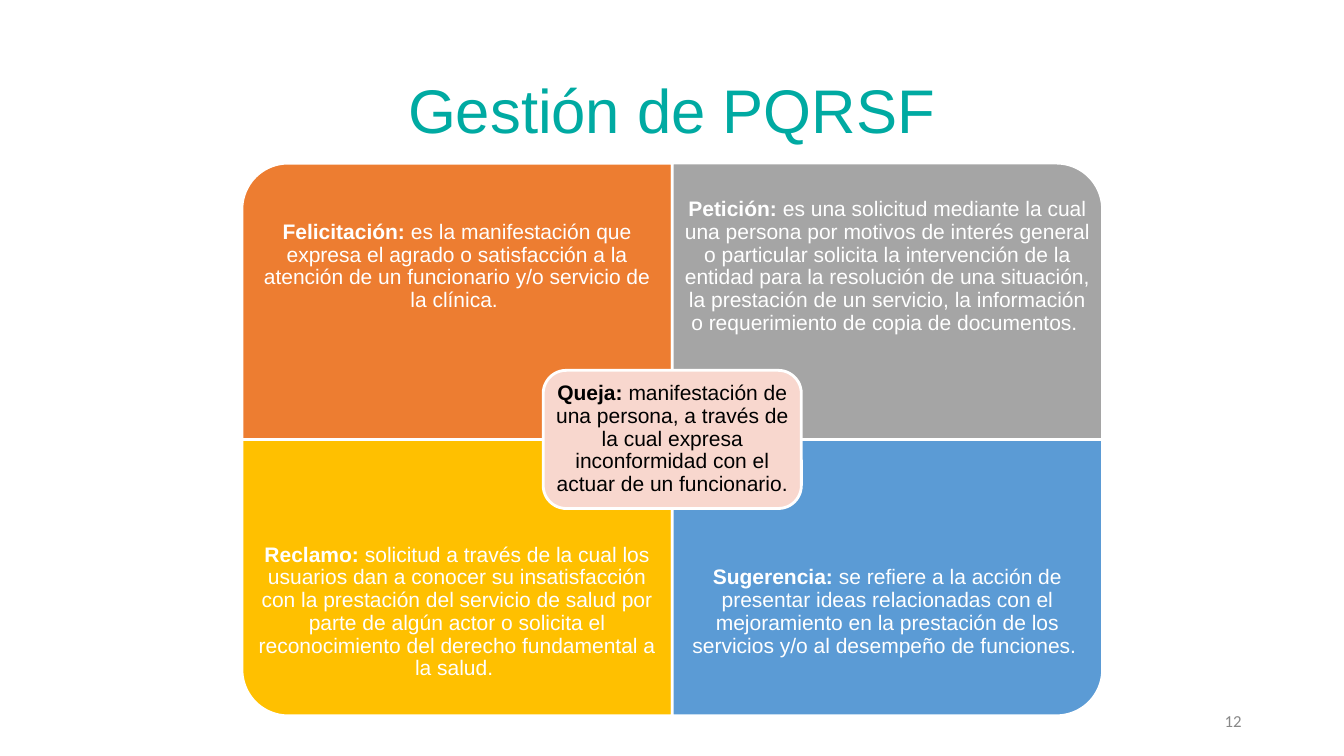
from dataclasses import dataclass

from pptx import Presentation
from pptx.dml.color import RGBColor
from pptx.enum.shapes import MSO_SHAPE
from pptx.enum.text import MSO_ANCHOR, MSO_AUTO_SIZE, PP_ALIGN
from pptx.util import Pt

ONE_ROUND_CORNER = MSO_SHAPE.ROUND_1_RECTANGLE
ROUNDED = MSO_SHAPE.ROUNDED_RECTANGLE
CENTER, RIGHT = PP_ALIGN.CENTER, PP_ALIGN.RIGHT
MIDDLE = MSO_ANCHOR.MIDDLE
NO_AUTOFIT = MSO_AUTO_SIZE.NONE
TITLE_ONLY = 5

WHITE = "FFFFFF"
MIDDLE_X, MIDDLE_Y = 480.2, 313.9
QUADRANT_WIDTH, QUADRANT_HEIGHT = 307.4, 197.4
QUADRANT_TEXT_HEIGHT = 148.1
CENTER_WIDTH, CENTER_HEIGHT = 184.4, 98.7
CENTER_MARGIN = 4.6


@dataclass(frozen=True)
class Area:
    left: float
    top: float
    width: float
    height: float

    def lengths(self) -> tuple:
        return Pt(self.left), Pt(self.top), Pt(self.width), Pt(self.height)


@dataclass(frozen=True)
class Quadrant:
    column: int
    row: int
    rotation: int
    fill: str
    term: str
    meaning: str


QUADRANTS = (
    Quadrant(0, 0, 270, "ED7D31", "Felicitación: ",
             "es la manifestación que expresa el agrado o satisfacción a la "
             "atención de un funcionario y/o servicio de la clínica. "),
    Quadrant(1, 0, 0, "A5A5A5", "Petición: ",
             "es una solicitud mediante la cual una persona por motivos de "
             "interés general o particular solicita la intervención de la "
             "entidad para la resolución de una situación, la prestación de un "
             "servicio, la información o requerimiento de copia de documentos. "),
    Quadrant(0, 1, 180, "FFC000", "Reclamo: ",
             "solicitud a través de la cual los usuarios dan a conocer su "
             "insatisfacción con la prestación del servicio de salud por parte "
             "de algún actor o solicita el reconocimiento del derecho "
             "fundamental a la salud. "),
    Quadrant(1, 1, 90, "5B9BD5", "Sugerencia: ",
             "se refiere a la acción de presentar ideas relacionadas con el "
             "mejoramiento en la prestación de los servicios y/o al desempeño "
             "de funciones. "),
)


def color(code: str) -> RGBColor:
    return RGBColor.from_string(code)


def write(box, text: str, *, size: float, ink: str, lead: str = "",
          font: str = "Arial", align=CENTER, spacing: float = 0.9,
          margins: tuple = (7.2, 3.6)) -> None:
    """Fill a box with one paragraph, opened by an optional bold lead."""
    frame = box.text_frame
    frame.word_wrap = True
    frame.auto_size = NO_AUTOFIT
    frame.vertical_anchor = MIDDLE
    frame.margin_left = frame.margin_right = Pt(margins[0])
    frame.margin_top = frame.margin_bottom = Pt(margins[1])
    para = frame.paragraphs[0]
    para.alignment = align
    para.line_spacing = spacing
    para.space_before = Pt(0)
    for words, bold in ((lead, True), (text, False)):
        if words:
            span = para.add_run()
            span.text = words
            span.font.name = font
            span.font.size = Pt(size)
            span.font.bold = bold
            span.font.color.rgb = color(ink)


def add_panel(page, kind, area: Area, fill: str, rotation: int = 0) -> None:
    panel = page.shapes.add_shape(kind, *area.lengths())
    panel.shadow.inherit = False
    panel.rotation = rotation
    panel.fill.solid()
    panel.fill.fore_color.rgb = color(fill)
    panel.line.color.rgb = color(WHITE)
    panel.line.width = Pt(2)


def add_text(page, area: Area, text: str, **style) -> None:
    write(page.shapes.add_textbox(*area.lengths()), text, **style)


def add_quadrant(page, quadrant: Quadrant) -> None:
    """Draw a panel whose round corner points outwards, and its text."""
    left = MIDDLE_X + (quadrant.column - 1) * QUADRANT_WIDTH
    top = MIDDLE_Y + (quadrant.row - 1) * QUADRANT_HEIGHT
    width, height = QUADRANT_WIDTH, QUADRANT_HEIGHT
    if quadrant.rotation % 180:
        width, height = height, width
    panel_area = Area(left + (QUADRANT_WIDTH - width) / 2,
                      top + (QUADRANT_HEIGHT - height) / 2, width, height)
    add_panel(page, ONE_ROUND_CORNER, panel_area, quadrant.fill,
              quadrant.rotation)
    text_top = top + quadrant.row * (QUADRANT_HEIGHT - QUADRANT_TEXT_HEIGHT)
    add_text(page, Area(left, text_top, QUADRANT_WIDTH, QUADRANT_TEXT_HEIGHT),
             quadrant.meaning, lead=quadrant.term, size=15, ink=WHITE,
             margins=(8.4, 8.4))


def add_center(page) -> None:
    area = Area(MIDDLE_X - CENTER_WIDTH / 2, MIDDLE_Y - CENTER_HEIGHT / 2,
                CENTER_WIDTH, CENTER_HEIGHT)
    add_panel(page, ROUNDED, area, "F8D7CE")
    inner = Area(area.left + CENTER_MARGIN, area.top + CENTER_MARGIN,
                 area.width - 2 * CENTER_MARGIN,
                 area.height - 2 * CENTER_MARGIN)
    add_text(page, inner,
             "manifestación de una persona, a través de la cual expresa "
             "inconformidad con el actuar de un funcionario. ",
             lead="Queja: ", size=15, ink="000000", margins=(4.4, 4.4))


def main() -> None:
    deck = Presentation()
    deck.slide_width, deck.slide_height = Pt(960), Pt(540)
    page = deck.slides.add_slide(deck.slide_layouts[TITLE_ONLY])
    title = page.shapes.title
    title.left, title.top, title.width, title.height = Area(
        66, 28.8, 828, 104.4).lengths()
    write(title, "Gestión de PQRSF", size=44, ink="00AAA2")
    add_text(page, Area(678, 500.5, 216, 28.8), "12", size=12, ink="888888",
             font="Calibri", align=RIGHT, spacing=1.0)
    for quadrant in QUADRANTS:
        add_quadrant(page, quadrant)
    add_center(page)
    deck.save("out.pptx")


if __name__ == "__main__":
    main()
